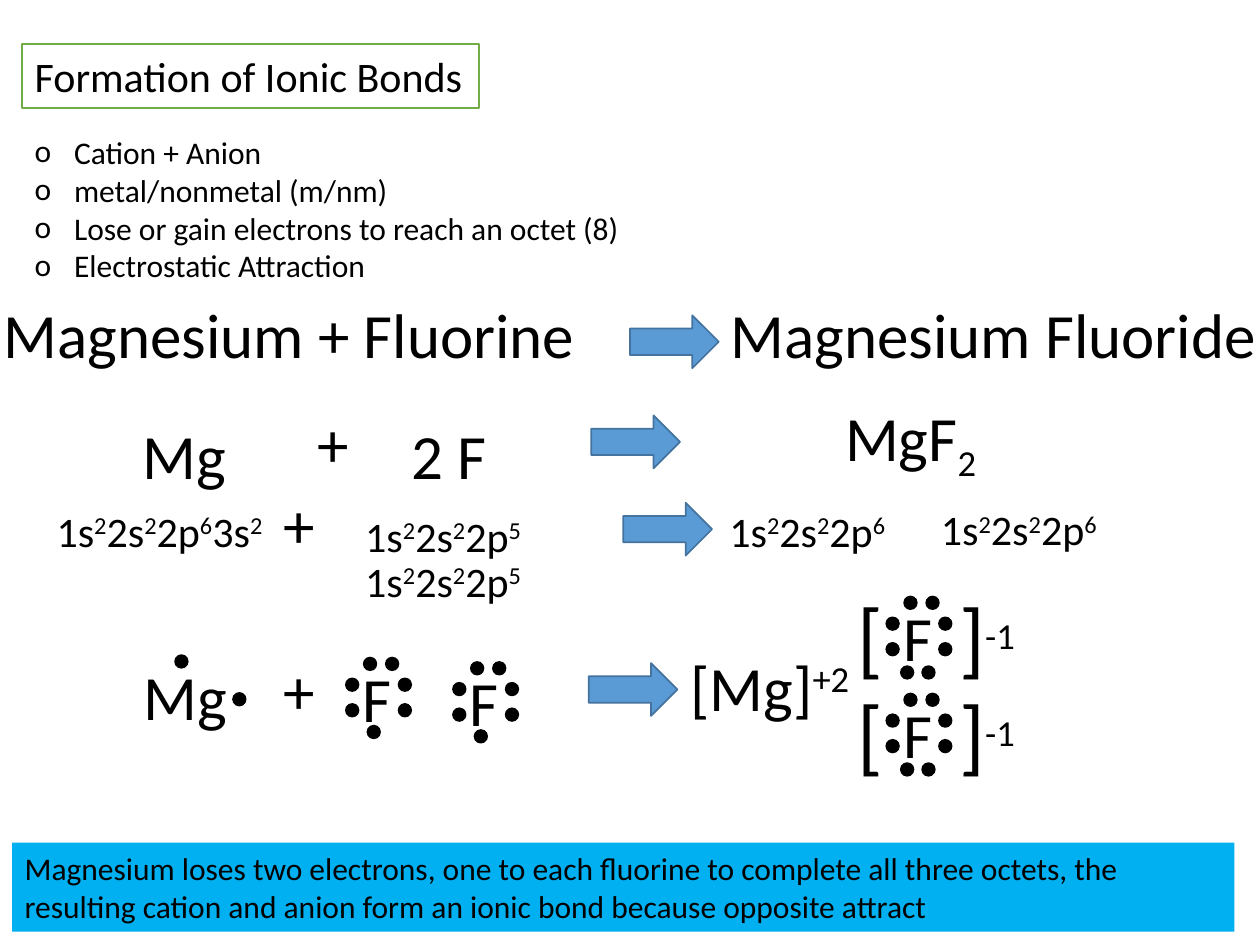
from dataclasses import dataclass

from lxml import etree
from pptx import Presentation
from pptx import util as u
from pptx.dml.color import RGBColor
from pptx.enum import shapes, text
from pptx.oxml.ns import qn


@dataclass(frozen=True)
class Theme:
    font: str = "Calibri"
    ink: str = "000000"
    paper: str = "FFFFFF"
    title_line: str = "70AD47"
    arrow_fill: str = "5B9BD5"
    arrow_line: str = "43739E"
    banner: str = "00B0F0"
    body: int = 18
    heading: int = 24
    symbol: int = 36
    bracket: int = 48


THEME = Theme()
SUPER, SUB = 30, -25


def write(paragraph, content, size=THEME.symbol, shift=SUPER, shift_size=None):
    """Write content; every second piece between bars is raised or lowered."""
    paragraph.alignment = text.PP_ALIGN.LEFT
    paragraph.space_before = u.Pt(0)
    for i, piece in enumerate(content.split("|")):
        if not piece:
            continue
        shifted = i % 2 == 1
        run = paragraph.add_run()
        run.text = piece
        run.font.name = THEME.font
        run.font.size = u.Pt(shift_size if shifted and shift_size else size)
        run.font.color.rgb = RGBColor.from_string(THEME.ink)
        if shifted:
            run._r.get_or_add_rPr().set("baseline", str(shift * 1000))


class Board:
    """The style and the current slide."""

    def __init__(self, slide, theme):
        self.slide = slide
        self.theme = theme

    def place(self, item, left, top, width, height):
        item.left, item.top = u.Pt(left), u.Pt(top)
        item.width, item.height = u.Pt(width), u.Pt(height)

    def paint(self, item, fill, line=None):
        item.fill.solid()
        item.fill.fore_color.rgb = RGBColor.from_string(fill)
        if line:
            item.line.color.rgb = RGBColor.from_string(line)
            item.line.width = u.Pt(1)
        else:
            item.line.fill.background()

    def fit(self, frame, wrap=False, grow=True):
        frame.word_wrap = wrap
        sizing = text.MSO_AUTO_SIZE
        frame.auto_size = sizing.SHAPE_TO_FIT_TEXT if grow else sizing.NONE

    def title(self, content, *box):
        title = self.slide.shapes.title
        self.place(title, *box)
        self.paint(title, self.theme.paper, self.theme.title_line)
        self.fit(title.text_frame, wrap=True, grow=False)
        write(title.text_frame.paragraphs[0], content, size=self.theme.heading)

    def bullets(self, points, *box):
        body = self.slide.placeholders[1]
        self.place(body, *box)
        frame = body.text_frame
        self.fit(frame, wrap=True, grow=False)
        for i, point in enumerate(points):
            paragraph = frame.add_paragraph() if i else frame.paragraphs[0]
            write(paragraph, point, size=self.theme.body)
            props = paragraph._p.get_or_add_pPr()
            props.set("marL", str(u.Pt(22.5)))
            props.set("indent", str(u.Pt(-22.5)))
            etree.SubElement(props, qn("a:buFont")).set("typeface", self.theme.font)
            etree.SubElement(props, qn("a:buChar")).set("char", "o")

    def label(self, content, left, top, width, height=51, parts=None, **style):
        parts = parts or self.slide.shapes
        box = parts.add_textbox(u.Pt(left), u.Pt(top), u.Pt(width), u.Pt(height))
        self.fit(box.text_frame)
        write(box.text_frame.paragraphs[0], content, **style)

    def shape(self, kind, box, fill, line=None, parts=None):
        parts = parts or self.slide.shapes
        item = parts.add_shape(kind, *(u.Pt(n) for n in box))
        item.shadow.inherit = False
        self.paint(item, fill, line)
        return item

    def arrow(self, left, top):
        self.shape(shapes.MSO_SHAPE.RIGHT_ARROW, (left, top, 50.7, 30.2),
                   self.theme.arrow_fill, self.theme.arrow_line)

    def banner(self, content, *box):
        item = self.shape(shapes.MSO_SHAPE.RECTANGLE, box, self.theme.banner)
        self.fit(item.text_frame, wrap=True)
        write(item.text_frame.paragraphs[0], content, size=self.theme.body)

    def atom(self, symbol, left, top, width, electrons):
        """A symbol with its valence dots, placed relative to the symbol."""
        parts = self.slide.shapes.add_group_shape().shapes
        self.label(symbol, left, top, width, parts=parts)
        for dx, dy in electrons:
            self.shape(shapes.MSO_SHAPE.OVAL, (left + dx, top + dy, 7.2, 7.2),
                       self.theme.ink, self.theme.ink, parts)
        return parts

    def fluoride(self, left, top):
        parts = self.atom("F", left, top, 31, SHELL + [(5.8, 42.3), (18, 42.3)])
        bracket = dict(top=top - 8, height=65.4, parts=parts, size=self.theme.bracket)
        self.label("[", left - 25.9, width=29.1, **bracket)
        self.label("]|-1", left + 32.2, width=50, shift_size=self.theme.symbol, **bracket)


# Electrons shared by every fluorine: both sides and the pair on top
SHELL = [(x, y) for x in (-2.5, 27.6) for y in (14.4, 29)] + [(7.7, 2.5), (20.3, 2.5)]
FLUORINE = SHELL + [(9.8, 41.4)]


def main():
    deck = Presentation()
    deck.slide_width, deck.slide_height = u.Pt(720), u.Pt(540)
    board = Board(deck.slides.add_slide(deck.slide_layouts[1]), THEME)

    # Heading and key points
    board.title("Formation of Ionic Bonds", 12.6, 25.2, 261, 36.4)
    board.bullets(["Cation + Anion", "metal/nonmetal (m/nm)",
                   "Lose or gain electrons to reach an octet (8)",
                   "Electrostatic Attraction"], 12.6, 72.4, 360, 94.5)

    # Word equation
    board.label("Magnesium + Fluorine", -5, 165.3, 355)
    board.label("Magnesium Fluoride", 410.4, 165.3, 330)

    # Symbol equation
    board.label("Mg", 74.2, 234.7, 62.6)
    board.label("2 F", 228.2, 234.7, 57.6)
    board.label("MgF|2", 475.9, 223.9, 91.4, shift=SUB)

    # Electron configurations
    for configuration, left, top, width in [
            ("1s|2|2s|2|2p|6|3s|2", 25.2, 285.1, 137.5),
            ("1s|2|2s|2|2p|5", 201.6, 288, 107.3),
            ("1s|2|2s|2|2p|5", 201.6, 313.9, 107.3),
            ("1s|2|2s|2|2p|6", 409.7, 285.1, 107.3),
            ("1s|2|2s|2|2p|6", 530.6, 284.4, 107.3)]:
        board.label(configuration, left, top, width, 36.4, size=THEME.heading)

    # Electron-dot equation
    board.atom("Mg", 74.9, 372.2, 62.6, [(25.2, 2.2), (58.3, 23.8)])
    board.atom("F", 200.2, 373.3, 31, FLUORINE)
    board.atom("F", 261.4, 375.8, 31, FLUORINE)
    board.label("[Mg]|+2", 387.4, 367.2, 109.4)
    for top in (338.4, 393.8):
        board.fluoride(509, top)

    # Plus signs and reaction arrows
    for left, top in [(174.2, 227.5), (154.8, 273.6), (154.8, 368.6)]:
        board.label("+", left, top, 32.4)
    for left, top in [(360, 180.2), (337.9, 237.4), (356.2, 287.3), (336.4, 378.9)]:
        board.arrow(left, top)

    # Conclusion
    board.banner("Magnesium loses two electrons, one to each fluorine to complete all "
                 "three octets, the resulting cation and anion form an ionic bond "
                 "because opposite attract", 7, 481.5, 698.4, 50.9)

    deck.save("out.pptx")


if __name__ == "__main__":
    main()
